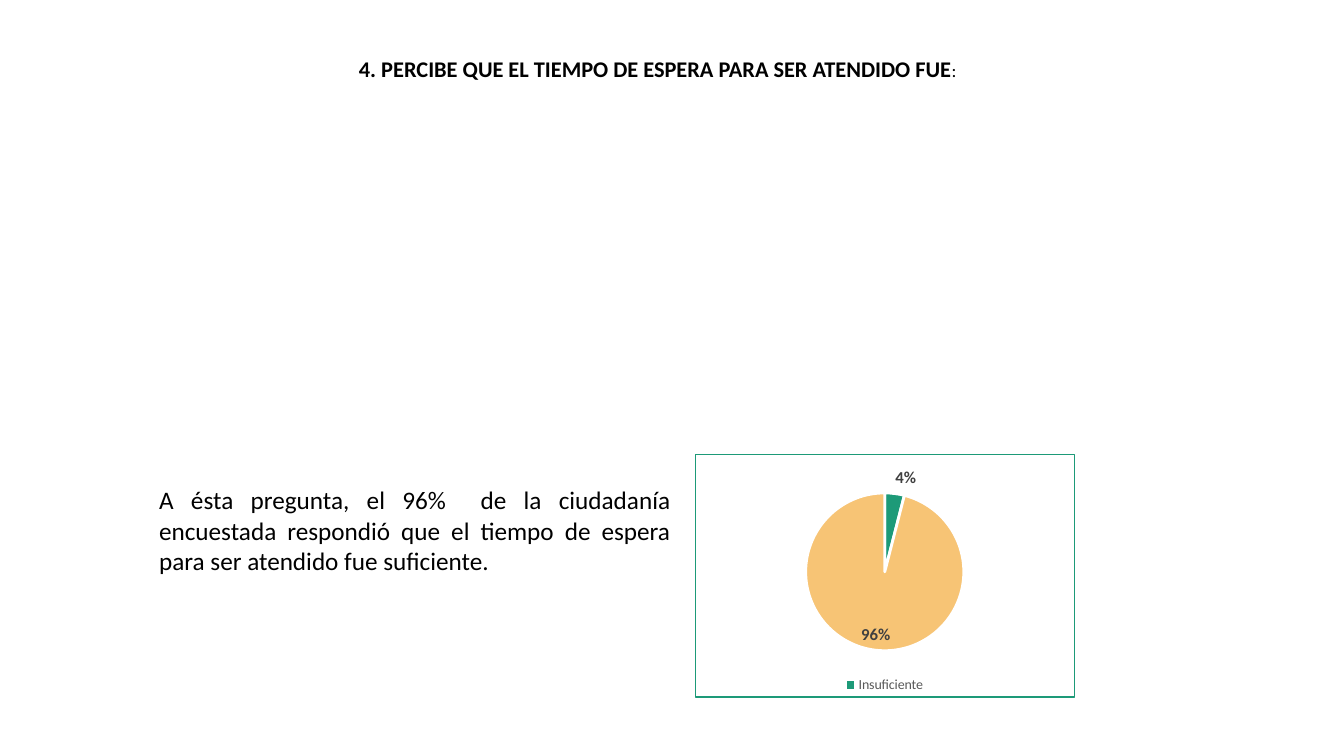
import pptx
import pptx.chart.data
import pptx.dml.color
import pptx.enum.chart
import pptx.enum.text
import pptx.oxml
import pptx.oxml.ns
import pptx.util
from pptx.util import Inches

RGBColor = pptx.dml.color.RGBColor
BLACK = RGBColor(0x00, 0x00, 0x00)
WHITE = RGBColor(0xFF, 0xFF, 0xFF)
GREEN = RGBColor(0x1D, 0x9A, 0x78)
AMBER = RGBColor(0xF7, 0xC4, 0x75)
GRAY = RGBColor(0x59, 0x59, 0x59)
DARK = RGBColor(0x40, 0x40, 0x40)
FACE = "Calibri"
SHARES = {"Insuficiente": 4, "Suficiente": 96}


def style(font, size, color, bold=False):
    font.name = FACE
    font.size = pptx.util.Pt(size)
    font.color.rgb = color
    font.bold = bold


def parse_chart(xml):
    """Turn chart XML, with its namespaces left out, into an element."""
    head, rest = xml.split(">", 1)
    names = pptx.oxml.ns.nsdecls("c", "a")
    return pptx.oxml.parse_xml(f"{head} {names}>{rest}")


def add_title(slide):
    title = slide.shapes.title
    title.left, title.top = Inches(3.46), Inches(0.4)
    title.width, title.height = Inches(8.96), Inches(0.59)
    frame = title.text_frame
    frame.word_wrap = True
    frame.vertical_anchor = pptx.enum.text.MSO_ANCHOR.MIDDLE
    line = frame.paragraphs[0]
    line.alignment = pptx.enum.text.PP_ALIGN.LEFT
    line.line_spacing = 0.9
    text = "4. PERCIBE QUE EL TIEMPO DE ESPERA PARA SER ATENDIDO FUE"
    for part, size, bold in ((text, 16, True), (":", 13, False)):
        run = line.add_run()
        run.text = part
        style(run.font, size, BLACK, bold)


def add_finding(slide):
    box = slide.shapes.add_textbox(
        Inches(1.48), Inches(4.76), Inches(5.27), Inches(1.01))
    frame = box.text_frame
    frame.word_wrap = True
    line = frame.paragraphs[0]
    line.text = ("A ésta pregunta, el 96%  de la ciudadanía encuestada "
                 "respondió que el tiempo de espera para ser atendido "
                 "fue suficiente.")
    line.alignment = pptx.enum.text.PP_ALIGN.JUSTIFY
    style(line.font, 18, BLACK)


def add_pie(slide):
    data = pptx.chart.data.CategoryChartData()
    data.categories = list(SHARES)
    data.add_series("Series 1", list(SHARES.values()))
    chart = slide.shapes.add_chart(
        pptx.enum.chart.XL_CHART_TYPE.PIE,
        Inches(6.89), Inches(4.5), Inches(3.77), Inches(2.42), data).chart
    chart.has_title = False
    style(chart.font, 10, BLACK)
    plot = chart.plots[0]
    plot.vary_by_categories = True
    for spot, color in enumerate((GREEN, AMBER)):
        form = plot.series[0].points[spot].format
        form.fill.solid()
        form.fill.fore_color.rgb = color
        form.line.color.rgb = WHITE
        form.line.width = pptx.util.Pt(2)
    labels = plot.series[0].data_labels
    labels.show_percentage = True
    labels.show_value = False
    labels.number_format = "0%"
    labels.number_format_is_linked = False
    labels.position = pptx.enum.chart.XL_LABEL_POSITION.BEST_FIT
    style(labels.font, 12, DARK, True)
    add_legend(chart)
    place_plot(chart)
    add_frame(chart)


def add_legend(chart):
    """Put the legend below, with the first category alone."""
    chart.has_legend = True
    legend = chart.legend
    legend.position = pptx.enum.chart.XL_LEGEND_POSITION.BOTTOM
    legend.include_in_layout = False
    style(legend.font, 10, GRAY)
    entry = parse_chart(
        '<c:legendEntry><c:idx val="1"/><c:delete val="1"/></c:legendEntry>')
    legend._element.find(pptx.oxml.ns.qn("c:legendPos")).addnext(entry)


def place_plot(chart):
    area = chart._chartSpace.chart.plotArea
    for old in area.findall(pptx.oxml.ns.qn("c:layout")):
        area.remove(old)
    sizes = {"x": 0.29, "y": 0.16, "w": 0.42, "h": 0.65}
    marks = "".join(f'<c:{key}Mode val="edge"/>' for key in "xy")
    marks += "".join(f'<c:{key} val="{size}"/>' for key, size in sizes.items())
    area.insert(0, parse_chart(
        '<c:layout><c:manualLayout><c:layoutTarget val="inner"/>'
        f'{marks}</c:manualLayout></c:layout>'))


def add_frame(chart):
    """Give the chart a white ground and a thin green border."""
    chart._chartSpace.chart.addnext(parse_chart(
        f'<c:spPr><a:solidFill><a:srgbClr val="{WHITE}"/></a:solidFill>'
        f'<a:ln w="{pptx.util.Pt(0.75)}"><a:solidFill>'
        f'<a:srgbClr val="{GREEN}"/></a:solidFill></a:ln></c:spPr>'))


def main():
    deck = pptx.Presentation()
    deck.slide_width, deck.slide_height = Inches(13.33), Inches(7.5)
    slide = deck.slides.add_slide(deck.slide_layouts[5])
    add_title(slide)
    add_finding(slide)
    add_pie(slide)
    deck.save("out.pptx")


if __name__ == "__main__":
    main()
